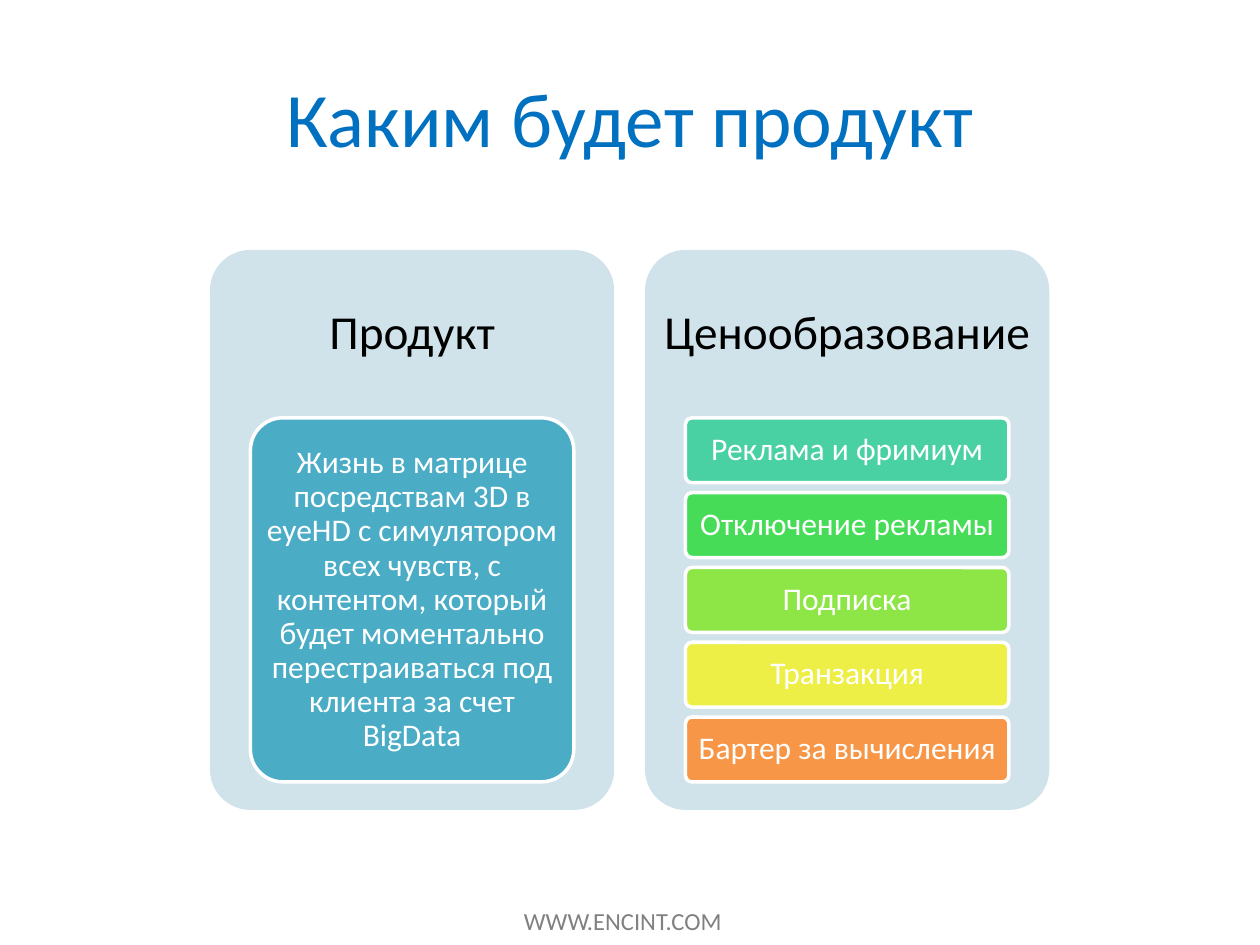
from pptx import Presentation
from pptx.dml.color import RGBColor
from pptx.enum import shapes, text
from pptx.util import Pt

COLORS = {
    "title": "0070C0", "footer": "808080", "heading": "000000", "white": "FFFFFF",
    "panel": "D0E3EA", "product": "4BACC6", "mint": "49D1A3", "green": "47DC57",
    "lime": "8DE646", "yellow": "EEEF46", "orange": "F79646",
}

deck = Presentation()
deck.slide_width, deck.slide_height = Pt(720), Pt(540)
page = deck.slides.add_slide(deck.slide_layouts[6])


def write(box, words, size, color, align=text.PP_ALIGN.CENTER, spacing=1.0,
          inset=(7.2, 3.6), wrap=True):
    frame = box.text_frame
    frame.word_wrap = wrap
    frame.vertical_anchor = text.MSO_ANCHOR.MIDDLE
    frame.margin_left = frame.margin_right = Pt(inset[0])
    frame.margin_top = frame.margin_bottom = Pt(inset[1])
    para = frame.paragraphs[0]
    para.alignment = align
    para.line_spacing = spacing
    span = para.add_run()
    span.text = words
    span.font.name = "Calibri"
    span.font.size = Pt(size)
    span.font.color.rgb = RGBColor.from_string(COLORS[color])


def add_rounded(left, top, width, height, fill, outlined=False):
    box = page.shapes.add_shape(shapes.MSO_SHAPE.ROUNDED_RECTANGLE,
                                Pt(left), Pt(top), Pt(width), Pt(height))
    box.adjustments[0] = 0.1
    box.shadow.inherit = False
    box.fill.solid()
    box.fill.fore_color.rgb = RGBColor.from_string(COLORS[fill])
    if outlined:
        box.line.color.rgb = RGBColor.from_string(COLORS["white"])
        box.line.width = Pt(2)
    else:
        box.line.fill.background()
    return box


# Footer and title
footer = page.shapes.add_textbox(Pt(292.3), Pt(514), Pt(128), Pt(24.5))
write(footer, "WWW.ENCINT.COM", 14, "footer", align=text.PP_ALIGN.LEFT, wrap=False)
title = page.shapes.add_textbox(Pt(36), Pt(21.6), Pt(648), Pt(90))
write(title, "Каким будет продукт", 44, "title")

# Two panels, each with a heading and a stack of cards of equal height
panels = [
    ("Продукт", [
        ("Жизнь в матрице посредствам 3D в eyeHD с симулятором всех чувств, "
         "с контентом, который будет моментально перестраиваться под клиента "
         "за счет BigData", "product"),
    ]),
    ("Ценообразование", [
        ("Реклама и фримиум", "mint"),
        ("Отключение рекламы", "green"),
        ("Подписка", "lime"),
        ("Транзакция", "yellow"),
        ("Бартер за вычисления", "orange"),
    ]),
]
panel_top, panel_width, panel_height = 142.8, 231, 320
heading_height = panel_height * 0.3
card_width, stack_height, gap = panel_width * 0.8, panel_height * 0.65, 5.7

for column, (heading, cards) in enumerate(panels):
    left = 120 + column * 248.6
    add_rounded(left, panel_top, panel_width, panel_height, "panel")
    heading_box = page.shapes.add_textbox(Pt(left), Pt(panel_top),
                                          Pt(panel_width), Pt(heading_height))
    write(heading_box, heading, 27, "heading", spacing=0.9, inset=(8, 8))

    card_left = left + (panel_width - card_width) / 2
    card_height = (stack_height - gap * (len(cards) - 1)) / len(cards)
    for row, (words, fill) in enumerate(cards):
        card_top = panel_top + heading_height + row * (card_height + gap)
        card = add_rounded(card_left, card_top, card_width, card_height, fill, outlined=True)
        write(card, words, 18, "white", spacing=0.9, inset=(3.6, 2.7))

deck.save("out.pptx")
